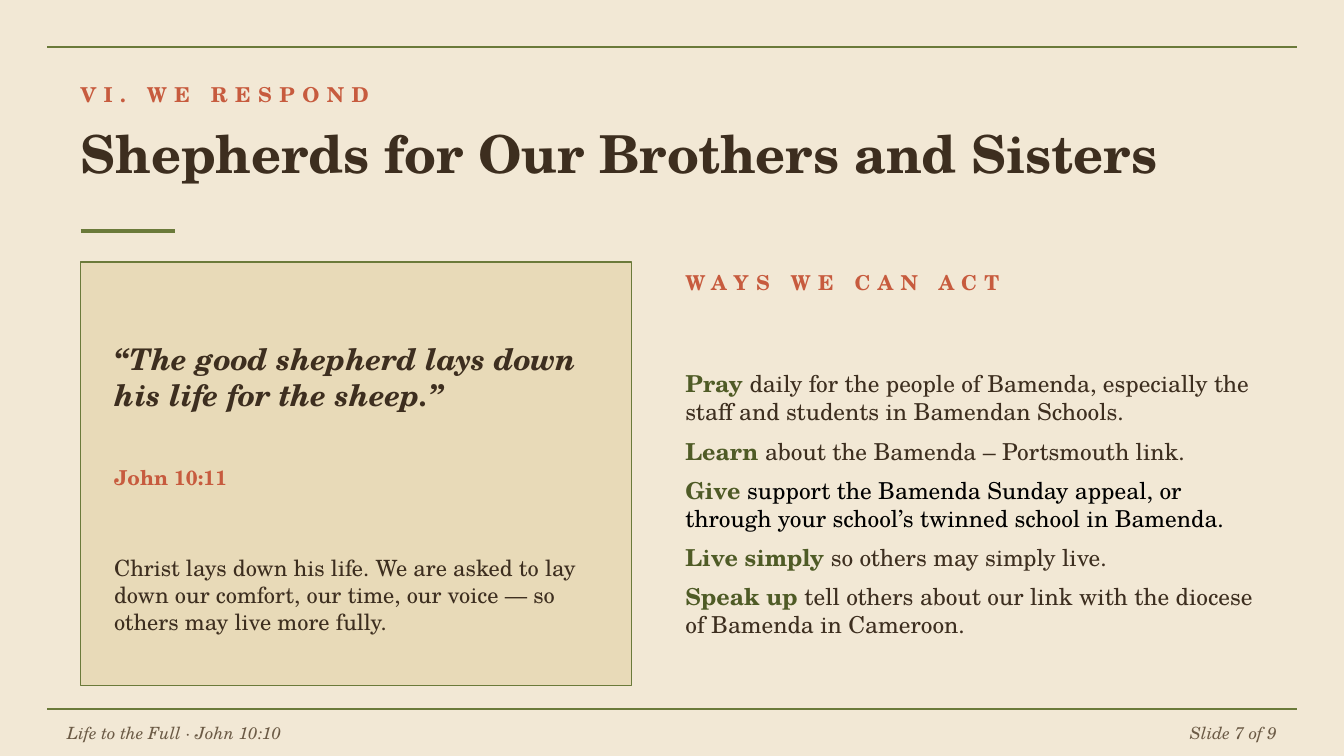
from lxml import etree
from pptx import Presentation
from pptx.dml.color import RGBColor
from pptx.enum.shapes import MSO_CONNECTOR, MSO_SHAPE
from pptx.enum.text import MSO_ANCHOR, PP_ALIGN
from pptx.oxml.ns import qn
from pptx.util import Pt

STRAIGHT = MSO_CONNECTOR.STRAIGHT
RECTANGLE = MSO_SHAPE.RECTANGLE
TOP, MIDDLE = MSO_ANCHOR.TOP, MSO_ANCHOR.MIDDLE
LEFT, RIGHT = PP_ALIGN.LEFT, PP_ALIGN.RIGHT

CREAM, SAND = "F2E8D5", "E8DAB8"
OLIVE, MOSS = "6B7A3A", "4F5B26"
TERRACOTTA, BROWN, TAUPE, BLACK = "C75B3E", "3D2E1F", "6B5A45", "000000"

ACTIONS = [
    ("Pray", "daily for the people of Bamenda, especially the staff and "
     "students in Bamendan Schools.", BROWN),
    ("Learn", "about the Bamenda – Portsmouth link.", BROWN),
    ("Give", "support the Bamenda Sunday appeal, or through your school’s "
     "twinned school in Bamenda.", BLACK),
    ("Live simply", "so others may simply live.", BROWN),
    ("Speak up", "tell others about our link with the diocese of Bamenda "
     "in Cameroon.", BROWN),
]


def rgb(value):
    return RGBColor.from_string(value)


class SlideBuilder:
    font_name = "TeX Gyre Schola"

    def __init__(self, slide):
        self.slide = slide
        fill = slide.background.fill
        fill.solid()
        fill.fore_color.rgb = rgb(CREAM)

    def rule(self, left, right, y, width=0.75):
        """Draw a horizontal olive line."""
        line = self.slide.shapes.add_connector(
            STRAIGHT, Pt(left), Pt(y), Pt(right), Pt(y))
        line.line.color.rgb = rgb(OLIVE)
        line.line.width = Pt(width)
        etree.SubElement(line._element.spPr, qn("a:effectLst"))

    def panel(self, left, top, width, height):
        shape = self.slide.shapes.add_shape(
            RECTANGLE, Pt(left), Pt(top), Pt(width), Pt(height))
        shape.shadow.inherit = False
        shape.fill.solid()
        shape.fill.fore_color.rgb = rgb(SAND)
        shape.line.color.rgb = rgb(OLIVE)
        shape.line.width = Pt(0.75)

    def text_frame(self, left, top, width, height, anchor=MIDDLE):
        """Add a wrapping text box without margins and return its frame."""
        frame = self.slide.shapes.add_textbox(
            Pt(left), Pt(top), Pt(width), Pt(height)).text_frame
        frame.word_wrap = True
        frame.vertical_anchor = anchor
        frame.margin_left = frame.margin_right = 0
        frame.margin_top = frame.margin_bottom = 0
        return frame

    def text(self, box, text, size, color=BROWN, bold=False, italic=False,
             align=LEFT, anchor=MIDDLE):
        paragraph = self.text_frame(*box, anchor).paragraphs[0]
        paragraph.alignment = align
        paragraph.add_run().text = text
        font = paragraph.font
        font.name, font.size = self.font_name, Pt(size)
        font.bold, font.italic = bold, italic
        font.color.rgb = rgb(color)
        return paragraph

    def label(self, box, text):
        """Add a small heading with letters spaced by 4 points."""
        paragraph = self.text(box, text, 11, TERRACOTTA, bold=True)
        paragraph.runs[0]._r.get_or_add_rPr().set("spc", "400")

    def action_list(self, box, actions, size=12.5):
        frame = self.text_frame(*box)
        for index, (verb, detail, color) in enumerate(actions):
            paragraph = frame.add_paragraph() if index else frame.paragraphs[0]
            paragraph.space_after = Pt(6)
            paragraph.font.name = self.font_name
            paragraph.font.size = Pt(size)
            for words, run_color, bold in ((verb + " ", MOSS, True),
                                           (detail, color, False)):
                run = paragraph.add_run()
                run.text = words
                run.font.bold = bold
                run.font.color.rgb = rgb(run_color)


def main():
    presentation = Presentation()
    presentation.slide_width, presentation.slide_height = Pt(720), Pt(405)
    blank = presentation.slide_layouts[6]
    builder = SlideBuilder(presentation.slides.add_slide(blank))

    for y in (25.2, 379.8):
        builder.rule(25.2, 694.8, y)

    builder.label((43.2, 39.6, 432, 21.6), "VI. WE RESPOND")
    builder.text((43.2, 64.8, 633.6, 43.2),
                 "Shepherds for Our Brothers and Sisters", 28,
                 bold=True, anchor=TOP)
    builder.rule(43.2, 93.6, 123.84, 2.25)

    builder.panel(43.2, 140.4, 295.2, 226.8)
    builder.text((61.2, 158.4, 259.2, 86.4),
                 "“The good shepherd lays down his life for the sheep.”", 16,
                 bold=True, italic=True)
    builder.text((61.2, 244.8, 259.2, 21.6), "John 10:11", 11, TERRACOTTA,
                 bold=True)
    builder.text((61.2, 277.2, 259.2, 82.8),
                 "Christ lays down his life. We are asked to lay down our "
                 "comfort, our time, our voice — so others may live more "
                 "fully.", 12)

    builder.label((367.2, 140.4, 309.6, 21.6), "WAYS WE CAN ACT")
    builder.action_list((367.2, 169.2, 309.6, 201.6), ACTIONS)

    builder.text((36, 383.76, 360, 18), "Life to the Full · John 10:10", 9,
                 TAUPE, italic=True)
    builder.text((338.4, 383.76, 345.6, 18), "Slide 7 of 9", 9, TAUPE,
                 italic=True, align=RIGHT)

    presentation.save("out.pptx")


if __name__ == "__main__":
    main()
